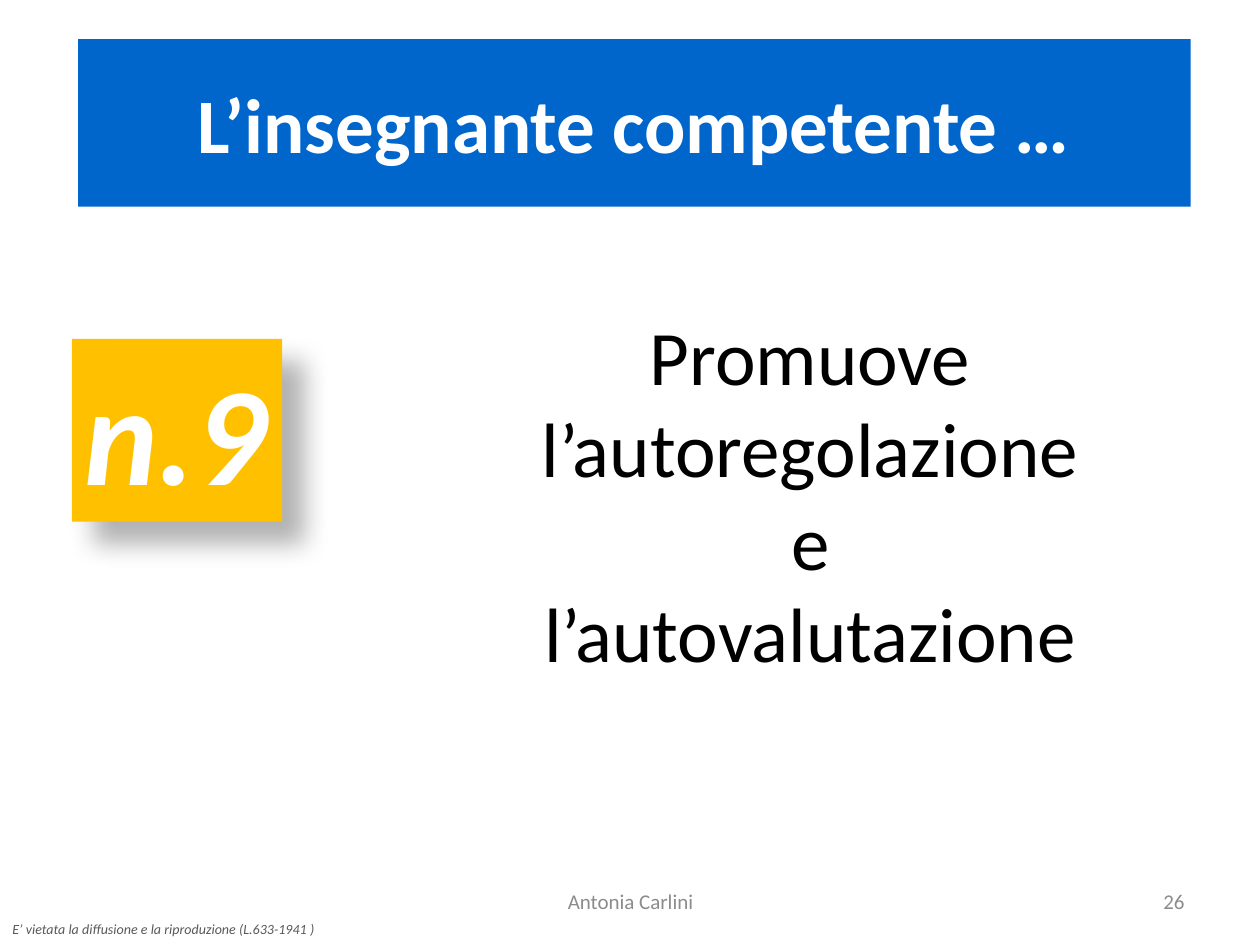
from lxml.etree import SubElement
from pptx import Presentation
from pptx.dml.color import RGBColor
from pptx.enum.shapes import MSO_SHAPE
from pptx.enum.text import MSO_ANCHOR, MSO_AUTO_SIZE, PP_ALIGN
from pptx.oxml.ns import qn
from pptx.util import Inches, Pt

BLUE = RGBColor(0x00, 0x66, 0xCC)
AMBER = RGBColor(0xFF, 0xC0, 0x00)
WHITE = RGBColor(0xFF, 0xFF, 0xFF)
BLACK = RGBColor(0x00, 0x00, 0x00)
DARK_GREY = RGBColor(0x59, 0x59, 0x59)
GREY = RGBColor(0x8C, 0x8C, 0x8C)

COLUMNS, ROWS = 100, 75


def write(frame, *lines, size, color, font="Calibri", bold=False, italic=False,
          align=PP_ALIGN.LEFT, anchor=MSO_ANCHOR.TOP, wrap=True,
          fit=MSO_AUTO_SIZE.NONE):
    """Fill a text frame with one paragraph per line."""
    frame.word_wrap = wrap
    frame.auto_size = fit
    frame.vertical_anchor = anchor
    for number, line in enumerate(lines):
        paragraph = frame.add_paragraph() if number else frame.paragraphs[0]
        paragraph.alignment = align
        run = paragraph.add_run()
        run.text = line
        run.font.name, run.font.size = font, Pt(size)
        run.font.bold, run.font.italic = bold, italic
        run.font.color.rgb = color


class Deck:
    def __init__(self, width=10, height=7.5):
        self.prs = Presentation()
        self.prs.slide_width = Inches(width)
        self.prs.slide_height = Inches(height)
        self.slide = self.prs.slides.add_slide(self.prs.slide_layouts[5])

    def place(self, column, row, columns, rows):
        """Turn grid columns and rows into slide lengths."""
        across = self.prs.slide_width / COLUMNS
        down = self.prs.slide_height / ROWS
        return (round(column * across), round(row * down),
                round(columns * across), round(rows * down))

    def title(self, cell, text, fill, **style):
        banner = self.slide.shapes.title
        banner.left, banner.top, banner.width, banner.height = self.place(*cell)
        banner.fill.solid()
        banner.fill.fore_color.rgb = fill
        write(banner.text_frame, text, **style)

    def text(self, cell, *lines, **style):
        box = self.slide.shapes.add_textbox(*self.place(*cell))
        write(box.text_frame, *lines, **style)

    def badge(self, cell, text, fill, **style):
        badge = self.slide.shapes.add_shape(MSO_SHAPE.RECTANGLE, *self.place(*cell))
        badge.fill.solid()
        badge.fill.fore_color.rgb = fill
        badge.line.fill.background()
        self.drop_shadow(badge)
        write(badge.text_frame, text, **style)

    def drop_shadow(self, shape, blur=15, distance=18, angle=45, opacity=30):
        shape.shadow.inherit = False
        effects = shape.element.spPr.find(qn("a:effectLst"))
        shadow = SubElement(effects, qn("a:outerShdw"), blurRad=str(Pt(blur)),
                            dist=str(Pt(distance)), dir=str(angle * 60000),
                            algn="tl", rotWithShape="0")
        tint = SubElement(shadow, qn("a:srgbClr"), val=str(BLACK))
        SubElement(tint, qn("a:alpha"), val=str(opacity * 1000))


def main():
    deck = Deck()

    # Title banner
    deck.title((6.2, 3.1, 88.3, 13.3), "L’insegnante competente …", BLUE,
               size=44, color=WHITE, bold=True,
               align=PP_ALIGN.CENTER, anchor=MSO_ANCHOR.MIDDLE)

    # Numbered badge and its statement
    deck.text((33.9, 24, 60.8, 38), "Promuove l’autoregolazione", "e",
              "l’autovalutazione", size=44, color=BLACK, align=PP_ALIGN.CENTER)
    deck.badge((5.7, 26.9, 16.7, 14.5), "n.9", AMBER, size=80, color=WHITE,
               bold=True, italic=True, wrap=False,
               fit=MSO_AUTO_SIZE.SHAPE_TO_FIT_TEXT)

    # Footer: author, page number, copyright notice
    footer = dict(size=12, color=GREY, anchor=MSO_ANCHOR.MIDDLE)
    deck.text((34.2, 69.5, 31.7, 4), "Antonia Carlini",
              align=PP_ALIGN.CENTER, **footer)
    deck.text((71.7, 69.5, 23.3, 4), "26", align=PP_ALIGN.RIGHT, **footer)
    deck.text((0, 72.6, 26.4, 2.4),
              "E’ vietata la diffusione e la riproduzione (L.633-1941 )",
              size=8, color=DARK_GREY, italic=True)

    deck.prs.save("out.pptx")


if __name__ == "__main__":
    main()
